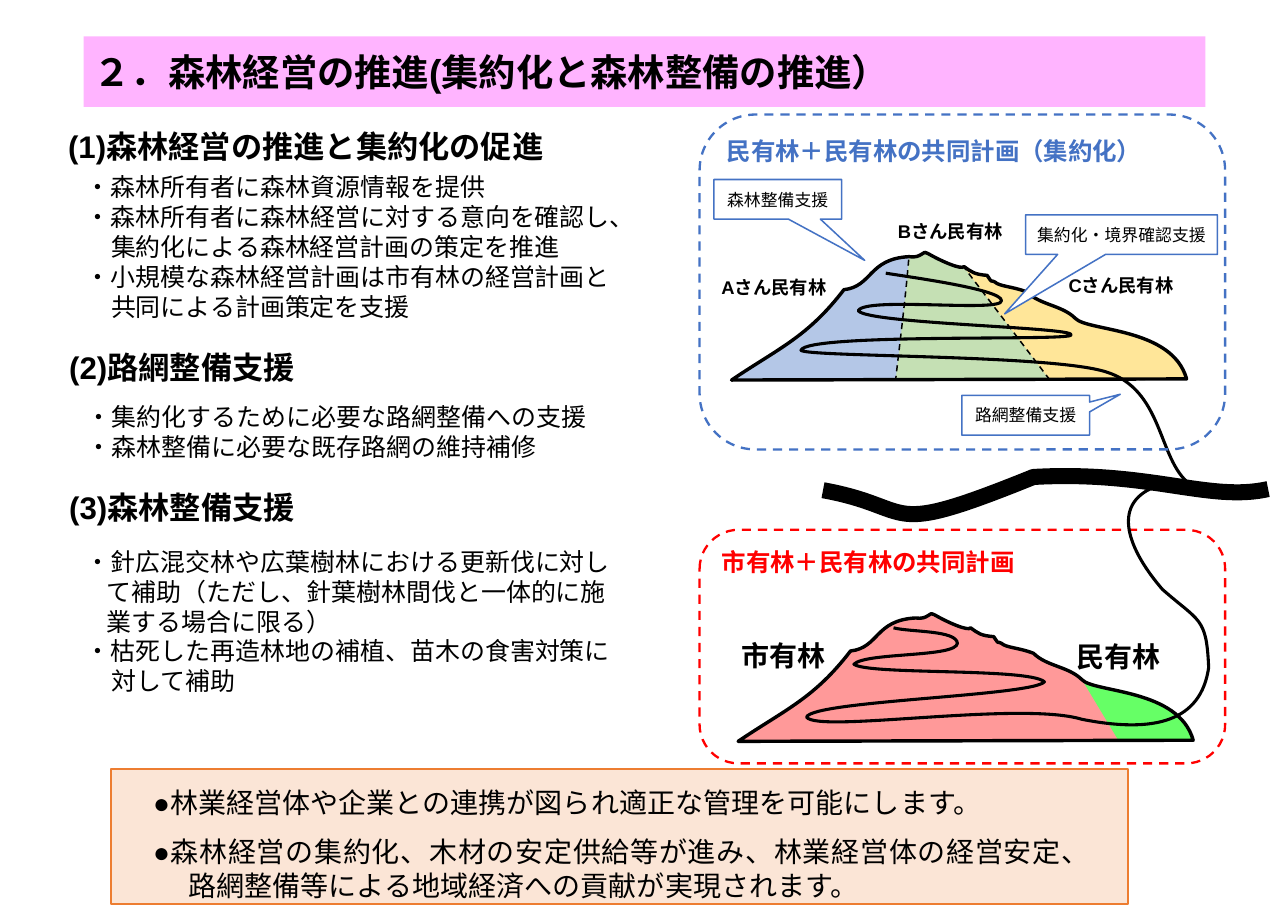
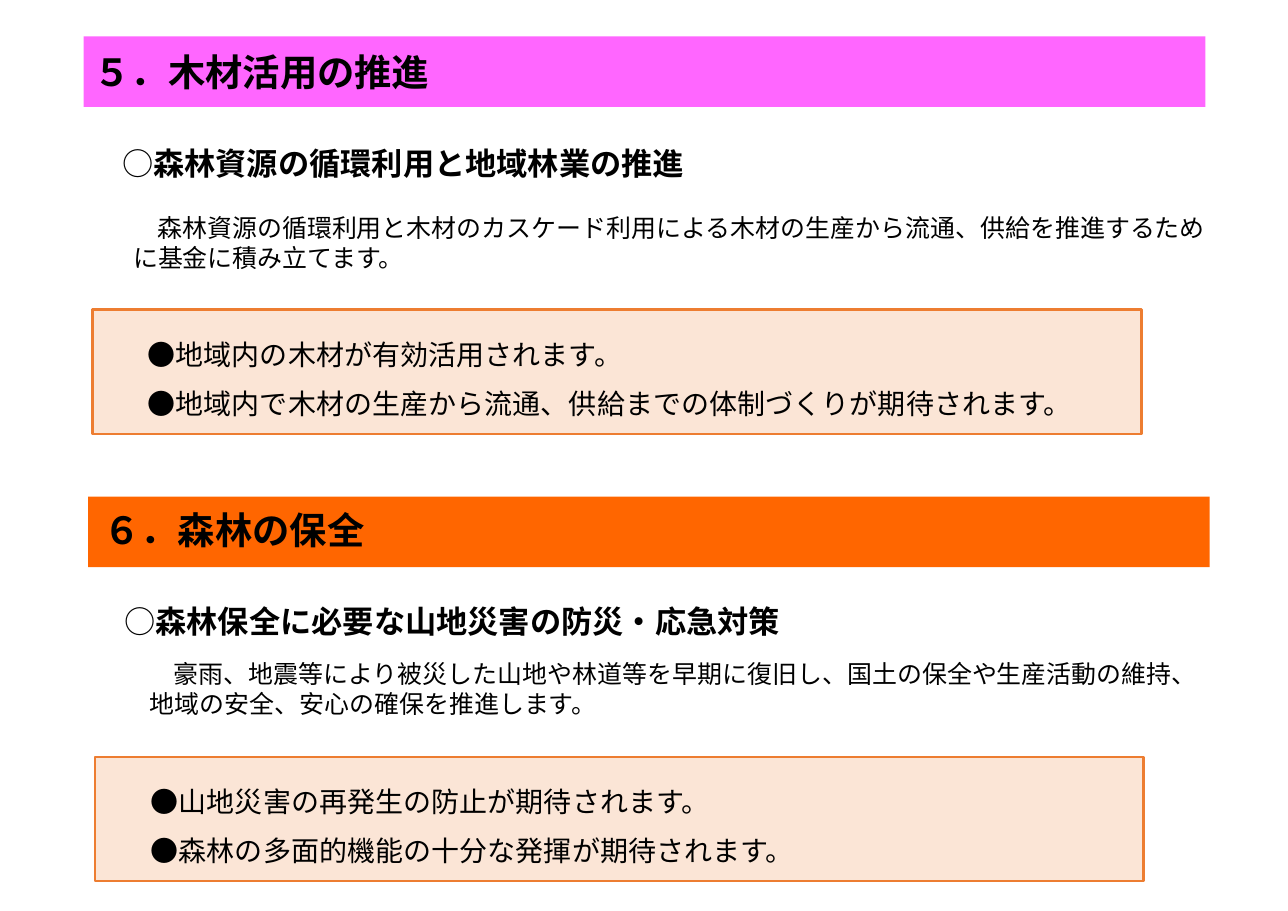
from lxml import etree
from pptx import Presentation
from pptx import util as u
from pptx.dml.color import RGBColor
from pptx.enum import dml, shapes, text
from pptx.oxml import ns

ARIAL, NOTO = "Arial", "Noto Sans CJK JP"
BLACK, WHITE, BLUE, RED = "000000", "FFFFFF", "4472C4", "FF0000"
PEACH, ORANGE = "FBE5D6", "ED7D31"
TITLE_SIZE, HEADING_SIZE, RESULT_SIZE, LIST_SIZE = 24.4, 20.4, 18.3, 16.3
PLAIN_INSETS = (0.1, 0.05, 0.1, 0.05)
HEADING_INSETS = (0.1, 0.12, 0.1, 0.08)
TITLE_INSETS = (0.1, 0.16, 0.1, 0.04)
MEASURE_INSETS = (0.1, 0.16, 0.1, 0.12)

# Outlines: a start point, then line ends (2 numbers) or Bezier curves (6 numbers).
WEST_SLOPE = [(6.64, 3.45), (7.07, 3.16, 7.33, 3.06, 7.66, 2.63),
              (7.92, 2.6, 7.88, 2.35, 8.25, 2.33)]
CREST = [(8.37, 2.35, 8.38, 2.26, 8.42, 2.3), (8.56, 2.38, 8.73, 2.45, 8.75, 2.42)]
EAST_RIDGE = [(8.82, 2.47, 8.84, 2.49, 8.96, 2.5), (9.02, 2.59, 8.98, 2.53, 9.03, 2.56),
              (9.07, 2.6, 9.19, 2.6, 9.32, 2.65), (9.44, 2.77, 9.64, 2.77, 9.76, 2.89)]
EAST_SLOPE = [(9.87, 3.01, 10.64, 2.97, 10.77, 3.44)]
MOUNTAIN = WEST_SLOPE + CREST + EAST_RIDGE + EAST_SLOPE
FOREST_A = WEST_SLOPE + [(8.22, 2.7, 8.17, 3.09, 8.13, 3.44)]
FOREST_C = [(8.76, 2.44)] + EAST_RIDGE + EAST_SLOPE + [(9.53, 3.45)]
PRIVATE_EDGE = [(9.76, 2.89)] + EAST_SLOPE + [(10.09, 3.44)]
CITY_SHIFT = (0.06, 3.28)
MAIN_ROAD = [(7.47, 4.45), (8.35, 4.61, 7.97, 4.9, 9.38, 4.33),
             (10.44, 4.27, 10.98, 4.56, 11.51, 4.44)]
UPPER_TRACK = [(10.77, 4.37), (10.5, 4.12, 10.55, 3.49, 9.98, 3.36),
               (9.4, 3.22, 7.32, 3.24, 7.27, 3.18), (7.32, 3.02, 9.77, 3.1, 9.72, 3.04),
               (9.76, 2.97, 7.86, 2.94, 7.79, 2.82), (7.86, 2.69, 9.1, 2.84, 9.09, 2.73),
               (9.1, 2.63, 8.29, 2.52, 8.04, 2.48)]
LOWER_TRACK = [(10.48, 4.42), (10.08, 4.58, 10.24, 4.99, 10.55, 5.35),
               (10.89, 5.65, 10.95, 5.6, 10.97, 6.06), (10.9, 6.55, 10.48, 6.66, 9.82, 6.53),
               (9.26, 6.36, 7.42, 6.66, 7.32, 6.51), (7.38, 6.36, 9.36, 6.32, 9.48, 6.19),
               (9.34, 6.06, 7.88, 6.13, 7.75, 6.03), (7.86, 5.92, 8.68, 5.97, 8.69, 5.84),
               (8.68, 5.72, 8.27, 5.74, 8.11, 5.7)]


def rgb(value):
    return RGBColor.from_string(value)


class Deck:
    def __init__(self):
        self.prs = Presentation()
        self.prs.slide_width, self.prs.slide_height = u.Inches(11.69), u.Inches(8.27)
        self.slide = None
        self.font = ARIAL

    def new_slide(self, font):
        self.slide = self.prs.slides.add_slide(self.prs.slide_layouts[1])
        self.font = font

    def paint(self, shape, fill=None, line=None, width=1.0, dashed=False):
        shape.shadow.inherit = False
        if fill:
            shape.fill.solid()
            shape.fill.fore_color.rgb = rgb(fill)
        else:
            shape.fill.background()
        if not line:
            shape.line.fill.background()
            return
        shape.line.color.rgb = rgb(line)
        shape.line.width = u.Pt(width)
        if dashed:
            shape.line.dash_style = dml.MSO_LINE.DASH

    def frame(self, shape, insets=PLAIN_INSETS, anchor=text.MSO_ANCHOR.TOP):
        frame = shape.text_frame
        frame.word_wrap = True
        frame.auto_size = text.MSO_AUTO_SIZE.NONE
        frame.vertical_anchor = anchor
        (frame.margin_left, frame.margin_top,
         frame.margin_right, frame.margin_bottom) = map(u.Inches, insets)
        return frame

    def paragraph(self, frame, runs, size, color=BLACK, align=text.PP_ALIGN.LEFT,
                  indent=(0, 0), before=0, font=None):
        """Add a paragraph; runs are (text, bold) pairs, indent is (left, first line)."""
        first = not frame.paragraphs[0].runs
        para = frame.paragraphs[0] if first else frame.add_paragraph()
        props = para._p.get_or_add_pPr()
        props.set("marL", str(u.Inches(indent[0])))
        props.set("indent", str(u.Inches(indent[1])))
        etree.SubElement(props, ns.qn("a:buNone"))
        para.alignment = align
        para.space_before = u.Pt(0 if first else before)
        for words, bold in runs:
            run = para.add_run()
            run.text = words
            run.font.size, run.font.bold = u.Pt(size), bold
            run.font.color.rgb = rgb(color)
            run.font.name = font or self.font
            east_asian = etree.SubElement(run.font._element, ns.qn("a:ea"))
            east_asian.set("typeface", font or self.font)

    def text_box(self, at, insets=PLAIN_INSETS):
        return self.frame(self.slide.shapes.add_textbox(*map(u.Inches, at)), insets)

    def placeholder(self, index, at, insets):
        """Place a template placeholder in front of what is drawn so far."""
        holder = self.slide.placeholders[index]
        holder.left, holder.top, holder.width, holder.height = map(u.Inches, at)
        self.slide.shapes._spTree.append(holder._element)
        return self.frame(holder, insets)

    def shape(self, kind, at, **style):
        shape = self.slide.shapes.add_shape(kind, *map(u.Inches, at))
        self.paint(shape, **style)
        return shape

    def label(self, words, at, size):
        self.paragraph(self.text_box(at), [(words, True)], size)

    def band(self, words, fill, left, top, text_at, is_title=True):
        self.shape(shapes.MSO_SHAPE.RECTANGLE, (left, top, 10.18, 0.64), fill=fill)
        frame = (self.placeholder(0, text_at, TITLE_INSETS) if is_title
                 else self.text_box(text_at, TITLE_INSETS))
        self.paragraph(frame, [(words, True)], TITLE_SIZE)

    def heading(self, words, left, top):
        frame = self.text_box((left, top, 4.74, 0.54), HEADING_INSETS)
        self.paragraph(frame, [(words, True)], HEADING_SIZE)

    def bullets(self, at, lines):
        """Lines without a leading dot continue the one before and are indented."""
        frame = self.text_box(at)
        for line in lines:
            indent = (0.19, -0.19) if line.startswith("・") else (0.23, 0)
            self.paragraph(frame, [(line, False)], LIST_SIZE, indent=indent)

    def results(self, box_at, text_at, lines, in_body=True):
        self.shape(shapes.MSO_SHAPE.RECTANGLE, box_at, fill=PEACH, line=ORANGE, width=1.5)
        frame = (self.placeholder(1, text_at, HEADING_INSETS) if in_body
                 else self.text_box(text_at, HEADING_INSETS))
        for line in lines:
            self.paragraph(frame, [(line, False)], RESULT_SIZE, before=10.2,
                           align=text.PP_ALIGN.JUSTIFY, indent=(0.32, -0.32))

    def measure(self, at, heading, body, indent, before):
        frame = self.text_box(at, MEASURE_INSETS)
        self.paragraph(frame, [("○", False), (heading, True)], HEADING_SIZE)
        self.paragraph(frame, [(body, False)], LIST_SIZE, indent=indent,
                       before=before, font=ARIAL)

    def plan_area(self, words, at, color):
        area = self.shape(shapes.MSO_SHAPE.ROUNDED_RECTANGLE, at,
                          line=color, width=1.5, dashed=True)
        self.paragraph(self.frame(area), [(words, True)], 16, color)

    def callout(self, words, at, tip):
        box = self.shape(shapes.MSO_SHAPE.RECTANGULAR_CALLOUT, at, fill=WHITE, line=BLUE)
        box.adjustments[0], box.adjustments[1] = tip
        frame = self.frame(box, anchor=text.MSO_ANCHOR.MIDDLE)
        self.paragraph(frame, [(words, False)], 11, align=text.PP_ALIGN.CENTER)

    def outline(self, segments, shift=(0, 0), closed=True, **style):
        """Draw straight segments, then bend those that carry control points."""
        moved = [[(u.Inches(x + shift[0]), u.Inches(y + shift[1]))
                  for x, y in zip(segment[::2], segment[1::2])] for segment in segments]
        builder = self.slide.shapes.build_freeform(*moved[0][0])
        builder.add_line_segments([points[-1] for points in moved[1:]], close=closed)
        shape = builder.convert_to_shape()
        straight = list(shape._element.iter(ns.qn("a:lnTo")))
        for line_to, points in zip(straight, moved[1:]):
            if len(points) == 1:
                continue
            curve = etree.Element(ns.qn("a:cubicBezTo"))
            for x, y in points:
                etree.SubElement(curve, ns.qn("a:pt"),
                                 x=str(x - shape.left), y=str(y - shape.top))
            line_to.getparent().replace(line_to, curve)
        self.paint(shape, **style)


def forest_management(deck):
    deck.new_slide(ARIAL)
    deck.results((1.01, 6.98, 9.23, 1.23), (1.29, 7.01, 8.7, 1.27), [
        "●林業経営体や企業との連携が図られ適正な管理を可能にします。",
        "●森林経営の集約化、木材の安定供給等が進み、林業経営体の経営安定、"
        "路網整備等による地域経済への貢献が実現されます。"])
    deck.band("２．森林経営の推進(集約化と森林整備の推進）", "FFB4FF", 0.76, 0.33,
              (0.75, 0.29, 9.89, 0.61))
    deck.heading("(1)森林経営の推進と集約化の促進", 0.52, 1.04)
    deck.bullets((0.68, 1.51, 5.73, 1.45), [
        "・森林所有者に森林資源情報を提供",
        "・森林所有者に森林経営に対する意向を確認し、",
        "集約化による森林経営計画の策定を推進",
        "・小規模な森林経営計画は市有林の経営計画と",
        "共同による計画策定を支援"])
    deck.heading("(2)路網整備支援", 0.53, 3.04)
    deck.bullets((0.69, 3.6, 5.01, 0.71), [
        "・集約化するために必要な路網整備への支援",
        "・森林整備に必要な既存路網の維持補修"])
    deck.heading("(3)森林整備支援", 0.53, 4.31)
    deck.bullets((0.68, 4.91, 5.01, 1.49), [
        "・針広混交林や広葉樹林における更新伐に対して補助"
        "（ただし、針葉樹林間伐と一体的に施業する場合に限る）",
        "・枯死した再造林地の補植、苗木の食害対策に",
        "対して補助"])

    deck.outline(MOUNTAIN, CITY_SHIFT, fill="FF9999")
    deck.label("市有林", (6.63, 5.75, 1.09, 0.41), RESULT_SIZE)
    deck.label("民有林", (9.67, 5.76, 1.07, 0.41), RESULT_SIZE)
    deck.plan_area("市有林＋民有林の共同計画", (6.35, 4.81, 4.77, 2.12), RED)
    deck.outline(MAIN_ROAD, closed=False, line=BLACK, width=10.5)
    deck.outline(PRIVATE_EDGE, CITY_SHIFT, fill="66FF66")
    deck.outline(MOUNTAIN, fill="C5E0B4")
    for forest, fill in ((FOREST_A, "B4C7E7"), (FOREST_C, "FFE699")):
        deck.outline(forest, fill=fill, line=BLACK, dashed=True)
    deck.outline(UPPER_TRACK, closed=False, line=BLACK, width=2)
    for shift in (CITY_SHIFT, (0, 0)):
        deck.outline(MOUNTAIN, shift, line=BLACK, width=2.25)
    deck.plan_area("民有林＋民有林の共同計画（集約化）", (6.35, 1.04, 4.77, 3.04), BLUE)
    deck.outline(LOWER_TRACK, closed=False, line=BLACK, width=2)
    for owner, left, top in (("A", 6.45, 2.46), ("B", 8.05, 1.95), ("C", 9.6, 2.44)):
        deck.label(owner + "さん民有林", (left, top, 1.18, 0.3), 12)
    deck.callout("集約化・境界確認支援", (9.31, 1.95, 1.74, 0.36), (-0.61, 2))
    deck.callout("路網整備支援", (8.73, 3.59, 1.16, 0.36), (0.74, -0.53))
    deck.callout("森林整備支援", (6.48, 1.63, 1.16, 0.36), (0.68, 1.54))


def timber_and_conservation(deck):
    deck.new_slide(NOTO)
    deck.band("５．木材活用の推進", "FF66FF", 0.76, 0.33, (0.75, 0.29, 7.51, 0.61))
    deck.measure((1.01, 1.15, 10.1, 1.85), "森林資源の循環利用と地域林業の推進",
                 "森林資源の循環利用と木材のカスケード利用による木材の生産から流通、"
                 "供給を推進するために基金に積み立てます。", (0.1, 0.22), 20)
    deck.results((0.84, 2.81, 9.52, 1.13), (1.24, 2.94, 8.7, 0.96), [
        "●地域内の木材が有効活用されます。",
        "●地域内で木材の生産から流通、供給までの体制づくりが期待されます。"])
    deck.band("６．森林の保全", "FF6600", 0.8, 4.51, (0.84, 4.44, 7.51, 0.61), is_title=False)
    deck.measure((1.03, 5.31, 10.1, 1.34), "森林保全に必要な山地災害の防災・応急対策",
                 "豪雨、地震等により被災した山地や林道等を早期に復旧し、国土の保全や"
                 "生産活動の維持、地域の安全、安心の確保を推進します。", (0.23, 0.22), 12.2)
    deck.results((0.86, 6.87, 9.52, 1.13), (1.27, 7, 8.7, 0.96), [
        "●山地災害の再発生の防止が期待されます。",
        "●森林の多面的機能の十分な発揮が期待されます。"], in_body=False)


def main():
    deck = Deck()
    forest_management(deck)
    timber_and_conservation(deck)
    deck.prs.save("out.pptx")


if __name__ == "__main__":
    main()
